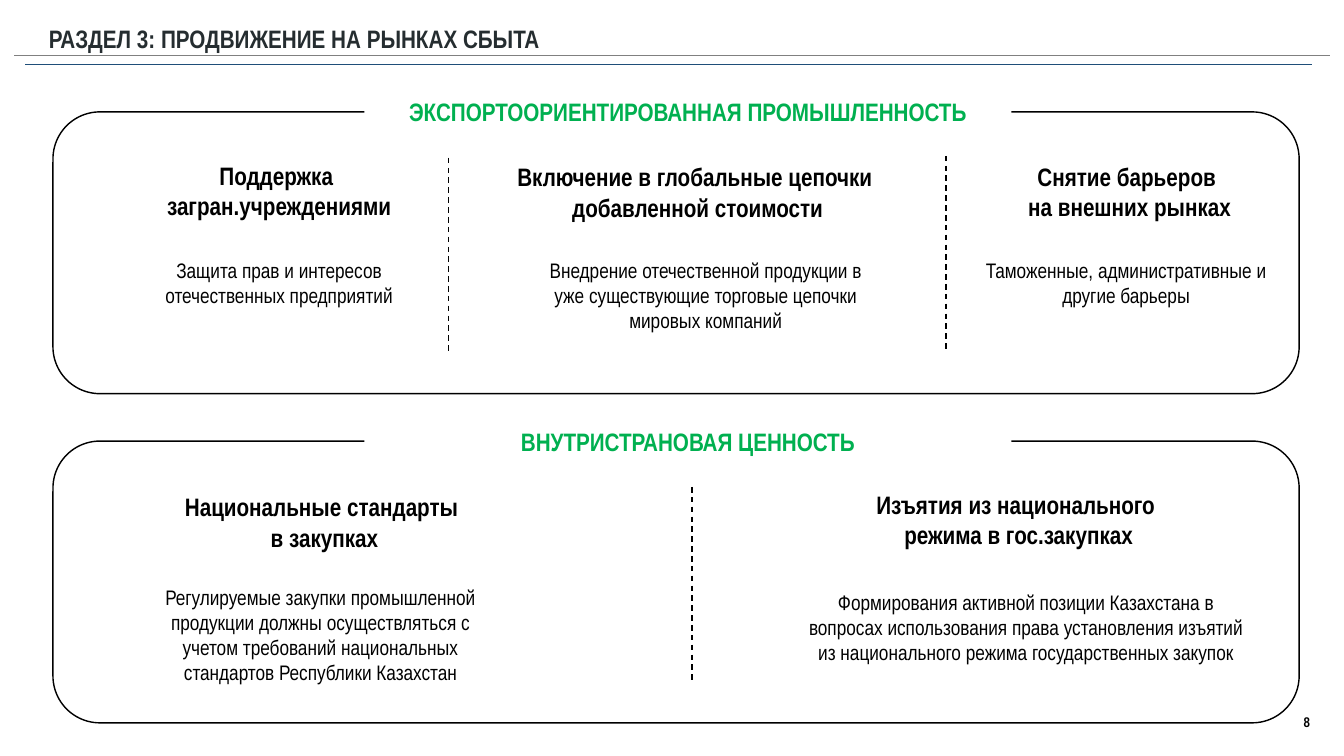
import pptx
import pptx.util
import pptx.dml.color
import pptx.enum.dml
import pptx.enum.shapes
import pptx.enum.text
import pptx.oxml

Cm, Pt = pptx.util.Cm, pptx.util.Pt
ALIGN = pptx.enum.text.PP_ALIGN
SHAPE = pptx.enum.shapes.MSO_SHAPE
FONT = "Arial Narrow"
COLORS = {"ink": "000000", "title": "252D30", "green": "00B050",
          "white": "FFFFFF", "grey": "808080", "navy": "1F4E79"}

# Content: places are (left, top, width, height) in cm
TITLE = "РАЗДЕЛ 3: ПРОДВИЖЕНИЕ НА РЫНКАХ СБЫТА"
PAGE = "8"
SECTIONS = [
    {"label": "ЭКСПОРТООРИЕНТИРОВАННАЯ ПРОМЫШЛЕННОСТЬ", "top": 5.64,
     "dividers": [(22.61, 7.95), (47.68, 7.85)],
     "columns": [
         (["Поддержка ", "загран.учреждениями"], (8.1, 7.95, 11.94, 3.33),
          "Защита прав и интересов отечественных предприятий",
          (7.67, 12.85, 12.8, 2.82)),
         (["Включение в глобальные цепочки ", "добавленной стоимости"],
          (25.68, 8.03, 18.97, 3.33),
          "Внедрение отечественной продукции в уже существующие торговые "
          "цепочки мировых компаний", (27.1, 12.85, 16.94, 4.11)),
         (["Снятие барьеров ", "на внешних рынках"], (51.51, 8, 10.85, 3.33),
          "Таможенные, административные и другие барьеры",
          (48.29, 12.85, 16.94, 2.82)),
     ]},
    {"label": "ВНУТРИСТРАНОВАЯ ЦЕННОСТЬ", "top": 22.23,
     "dividers": [(34.87, 24.54)],
     "columns": [
         (["Национальные стандарты ", "в закупках"], (8.99, 24.66, 14.73, 3.33),
          "Регулируемые закупки промышленной продукции должны осуществляться "
          "с учетом требований национальных стандартов Республики Казахстан",
          (8.05, 29.31, 16.21, 5.38)),
         (["Изъятия из национального ", "режима в гос.закупках"],
          (43.82, 24.54, 15.04, 3.33),
          "Формирования активной позиции Казахстана в вопросах использования "
          "права установления изъятий из национального режима "
          "государственных закупок", (40.36, 29.57, 22.71, 4.11)),
     ]},
]
FRAME_LEFT, FRAME_W, FRAME_H = 2.67, 62.81, 14.2
LABEL_LEFT, LABEL_RISE, LABEL_W, LABEL_H = 18.37, 0.89, 32.61, 1.8
DIVIDER_H = 9.8
RULES = [(0.71, 67.01, 2.79, "grey"), (1.27, 66.14, 3.25, "navy")]

# Text formats
HEAD = {"size": Pt(36), "bold": True, "name": FONT}
BODY = {"size": Pt(30), "bold": False, "name": FONT}
NUMBER = {"size": Pt(20), "bold": True, "name": FONT}


def rgb(name):
    return pptx.dml.color.RGBColor.from_string(COLORS[name])


def write(sp, lines, fmt, color="ink", align=ALIGN.CENTER, wrap=True):
    tf = sp.text_frame
    frame = {"word_wrap": wrap, "vertical_anchor": pptx.enum.text.MSO_ANCHOR.TOP,
             "auto_size": pptx.enum.text.MSO_AUTO_SIZE.NONE}
    for key, value in frame.items():
        setattr(tf, key, value)
    for i, line in enumerate(lines):
        p = tf.add_paragraph() if i else tf.paragraphs[0]
        p.alignment = align
        r = p.add_run()
        r.text = line
        for key, value in fmt.items():
            setattr(r.font, key, value)
        r.font.color.rgb = rgb(color)


def add_text(s, place, lines, fmt, **options):
    write(s.shapes.add_textbox(*map(Cm, place)), lines, fmt, **options)


def add_box(s, kind, place, line_width=0):
    sp = s.shapes.add_shape(kind, *map(Cm, place))
    sp.shadow.inherit = False
    sp.fill.solid()
    sp.fill.fore_color.rgb = rgb("white")
    if line_width:
        sp.line.color.rgb = rgb("ink")
        sp.line.width = Pt(line_width)
    else:
        sp.line.fill.background()
    return sp


def add_line(s, ends, color, width, dash=None):
    line = s.shapes.add_connector(pptx.enum.shapes.MSO_CONNECTOR.STRAIGHT,
                                  *map(Cm, ends))
    line.line.color.rgb = rgb(color)
    line.line.width = Pt(width)
    if dash:
        line.line.dash_style = dash
    line._element.spPr.append(pptx.oxml.parse_xml(
        '<a:effectLst xmlns:a="http://schemas.openxmlformats.org/drawingml/2006/main"/>'))


def main():
    prs = pptx.Presentation()
    prs.slide_width, prs.slide_height = Cm(67.74), Cm(38.1)
    s = prs.slides.add_slide(prs.slide_layouts[5])

    # Title with its two rules
    title = s.shapes.title
    place = {"left": 2.21, "top": 1.04, "width": 40.34, "height": 1.8}
    for key, value in place.items():
        setattr(title, key, Cm(value))
    write(title, [TITLE], HEAD, color="title", align=ALIGN.LEFT)
    for x1, x2, y, color in RULES:
        add_line(s, (x1, y, x2, y), color, 1)

    # Framed sections
    for section in SECTIONS:
        top = section["top"]
        add_box(s, SHAPE.ROUNDED_RECTANGLE,
                (FRAME_LEFT, top, FRAME_W, FRAME_H), line_width=2)
        label = add_box(s, SHAPE.RECTANGLE,
                        (LABEL_LEFT, top - LABEL_RISE, LABEL_W, LABEL_H))
        write(label, [section["label"]], HEAD, color="green")
        for x, y in section["dividers"]:
            add_line(s, (x, y, x, y + DIVIDER_H), "ink", 2,
                     pptx.enum.dml.MSO_LINE.DASH)
        for heading, head_place, body, body_place in section["columns"]:
            add_text(s, head_place, heading, HEAD, wrap=False)
            add_text(s, body_place, [body], BODY)

    # Page number
    add_text(s, (65.46, 35.84, 1.24, 1.27), [PAGE], NUMBER, align=ALIGN.LEFT)
    prs.save("out.pptx")


if __name__ == "__main__":
    main()
